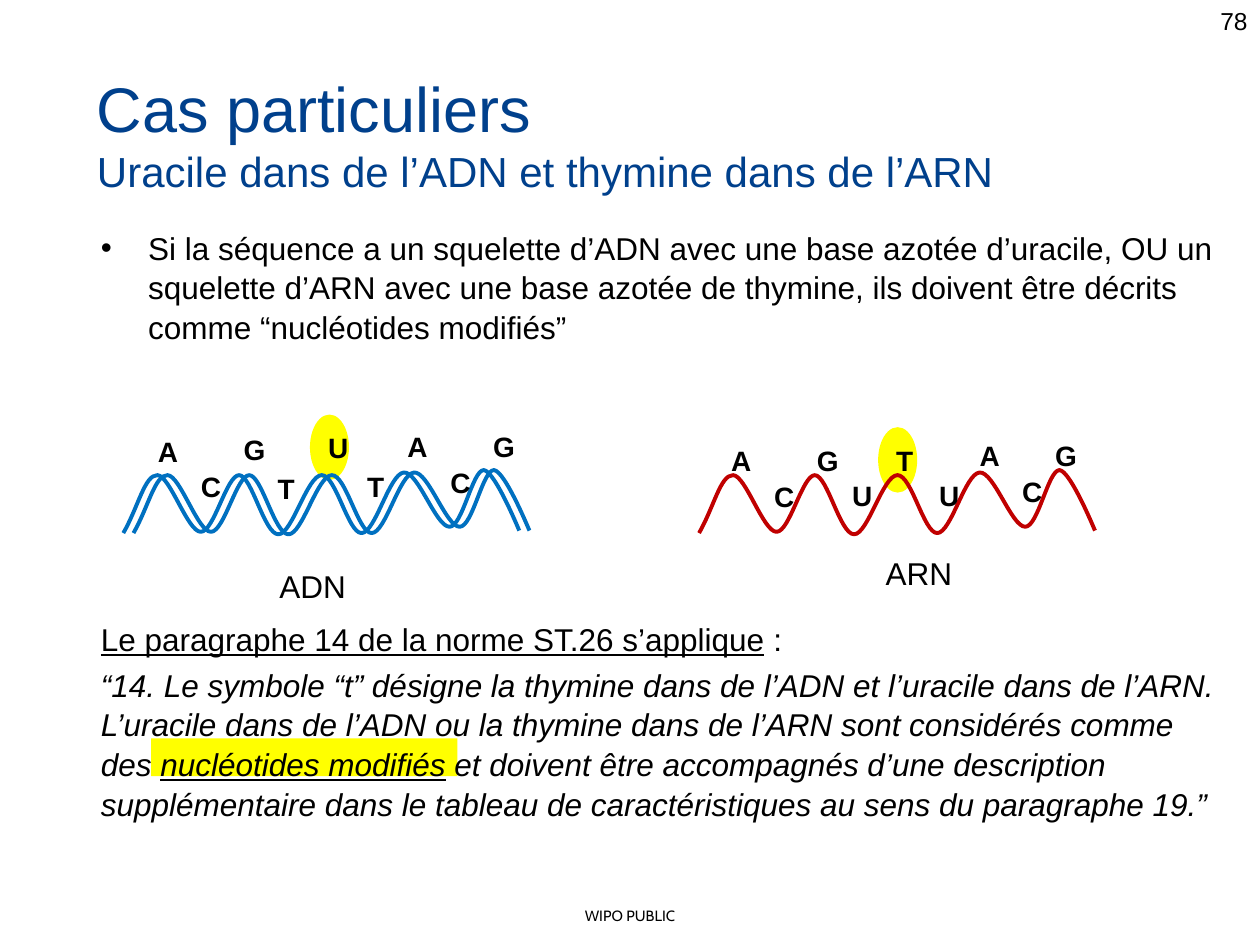
from lxml import etree
from pptx import Presentation
from pptx.dml.color import RGBColor
from pptx.enum.shapes import MSO_SHAPE
from pptx.enum.text import MSO_ANCHOR, MSO_AUTO_SIZE, PP_ALIGN
from pptx.oxml.ns import qn
from pptx.util import Pt

OVAL, RECTANGLE = MSO_SHAPE.OVAL, MSO_SHAPE.RECTANGLE
TOP, MIDDLE = MSO_ANCHOR.TOP, MSO_ANCHOR.MIDDLE
LEFT, CENTER, RIGHT = PP_ALIGN.LEFT, PP_ALIGN.CENTER, PP_ALIGN.RIGHT
FIXED = MSO_AUTO_SIZE.NONE

BLACK = RGBColor(0x00, 0x00, 0x00)
NAVY = RGBColor(0x00, 0x40, 0x8C)
YELLOW = RGBColor(0xFF, 0xFF, 0x00)
BLUE = RGBColor(0x00, 0x70, 0xC0)
RED = RGBColor(0xC0, 0x00, 0x00)

WAVE_TOP = 268.6
WAVE_START = (0, 36)
WAVE_CURVES = [
    ((8.6, 20.9), (12.2, 2.9), (19.4, 2.9)),
    ((26.6, 2.9), (36.7, 35.3), (44.3, 35.3)),
    ((51.8, 35.3), (59, 2.9), (66.2, 2.9)),
    ((73.4, 3.2), (80.6, 36.7), (88.6, 36.7)),
    ((96.5, 36.7), (105.1, 2.9), (113.4, 2.9)),
    ((121.5, 2.9), (128.4, 36), (136.1, 36)),
    ((144, 36), (152, 2.2), (160.3, 1.4)),
    ((168.5, 0.7), (178.6, 32.4), (186.4, 32.4)),
    ((193.8, 32.4), (199.5, 0), (206, 0)),
    ((212.4, 0.5), (226.5, 35.3), (226.3, 34.6)),
]
WAVES = [(70.5, BLUE), (76.3, BLUE), (399.5, RED)]

MODIFIED_BASES = [("T", 501.8, 244.1), ("U", 177.1, 236.9)]
BASES = [
    ("A", 79.9, 239), ("C", 104.4, 259.2), ("G", 128.9, 238.3),
    ("T", 148.3, 260.6), ("T", 199.4, 259.2), ("A", 222.5, 236.2),
    ("C", 247, 257), ("G", 271.4, 236.2),
    ("A", 407.5, 244.1), ("C", 432, 265), ("G", 456.5, 244.1),
    ("U", 476.6, 264.2), ("U", 526.3, 264.2), ("A", 549.4, 241.2),
    ("C", 573.8, 262.1), ("G", 592.6, 241.2),
]

TITLE = [("Cas particuliers", 36), ("Uracile dans de l’ADN et thymine dans de l’ARN", 24)]
RULE = ("Si la séquence a un squelette d’ADN avec une base azotée d’uracile, OU un "
        "squelette d’ARN avec une base azotée de thymine, ils doivent être décrits "
        "comme “nucléotides modifiés”")
HEADING = [("Le paragraphe 14 de la norme ST.26 s’applique", True), (" :", False)]
QUOTE = [
    ("“14. Le symbole “t” désigne la thymine dans de l’ADN et l’uracile dans de l’ARN. "
     "L’uracile dans de l’ADN ou la thymine dans de l’ARN sont considérés comme des ", False),
    ("nucléotides modifiés", True),
    (" et doivent être accompagnés d’une description supplémentaire dans le tableau "
     "de caractéristiques au sens du paragraphe 19.”", False),
]


class SlideBuilder:
    font_name = "Arial"

    def __init__(self, page):
        self.page = page

    def style(self, paragraph, size, color=BLACK, align=LEFT, bold=False, italic=False, name=None):
        paragraph.alignment = align
        font = paragraph.font
        font.name = name or self.font_name
        font.size = Pt(size)
        font.bold = bold
        font.italic = italic
        font.color.rgb = color

    def place(self, box, left, top, width, height, anchor):
        box.left, box.top, box.width, box.height = Pt(left), Pt(top), Pt(width), Pt(height)
        frame = box.text_frame
        frame.auto_size = FIXED
        frame.word_wrap = True
        frame.vertical_anchor = anchor
        return frame

    def title(self, lines, *area):
        frame = self.place(self.page.shapes.title, *area, MIDDLE)
        frame.margin_bottom = Pt(9.2)
        for index, (text, size) in enumerate(lines):
            paragraph = frame.add_paragraph() if index else frame.paragraphs[0]
            paragraph.text = text
            paragraph.space_before = Pt(0)
            self.style(paragraph, size, NAVY)

    def body(self, items, *area):
        frame = self.place(self.page.placeholders[1], *area, TOP)
        for index, (spans, space_before, bullet, italic) in enumerate(items):
            paragraph = frame.add_paragraph() if index else frame.paragraphs[0]
            for text, underline in spans:
                span = paragraph.add_run()
                span.text = text
                span.font.underline = underline
            properties = paragraph._p.get_or_add_pPr()
            indent = Pt(27) if bullet else 0
            properties.set("marL", str(indent))
            properties.set("indent", str(-indent))
            if bullet:
                etree.SubElement(properties, qn("a:buChar")).set("char", "•")
            else:
                etree.SubElement(properties, qn("a:buNone"))
            paragraph.space_before = Pt(space_before)
            paragraph.line_spacing = 1.05
            self.style(paragraph, 18, italic=italic)

    def label(self, text, left, top, width, height, size, wrap=True, **look):
        box = self.page.shapes.add_textbox(Pt(left), Pt(top), Pt(width), Pt(height))
        box.text_frame.word_wrap = wrap
        paragraph = box.text_frame.paragraphs[0]
        paragraph.text = text
        self.style(paragraph, size, **look)

    def shape(self, kind, left, top, width, height, fill=None):
        shape = self.page.shapes.add_shape(kind, Pt(left), Pt(top), Pt(width), Pt(height))
        shape.shadow.inherit = False
        shape.line.fill.background()
        if fill is None:
            shape.fill.background()
        else:
            shape.fill.solid()
            shape.fill.fore_color.rgb = fill
        return shape

    def marker(self, *area):
        marker = self.shape(RECTANGLE, *area, YELLOW)
        self.page.placeholders[1]._element.addprevious(marker._element)

    def base(self, letter, left, top, fill=None):
        oval = self.shape(OVAL, left, top, 22.3, 37.4, fill)
        oval.text_frame.word_wrap = True
        paragraph = oval.text_frame.paragraphs[0]
        paragraph.text = letter
        self.style(paragraph, 16, align=CENTER, bold=True)

    def wave(self, left, color):
        def locate(point):
            return Pt(left + point[0]), Pt(WAVE_TOP + point[1])

        builder = self.page.shapes.build_freeform(*locate(WAVE_START))
        builder.add_line_segments(
            [locate(point) for curve in WAVE_CURVES for point in curve], close=False)
        wave = builder.convert_to_shape()
        segments = list(wave._element.iter(qn("a:lnTo")))
        for start in range(0, len(segments), 3):
            curve = etree.Element(qn("a:cubicBezTo"))
            segments[start].addprevious(curve)
            for segment in segments[start:start + 3]:
                curve.append(segment[0])
                segment.getparent().remove(segment)
        wave.shadow.inherit = False
        wave.fill.background()
        wave.line.color.rgb = color
        wave.line.width = Pt(2.25)


def main():
    deck = Presentation()
    deck.slide_width, deck.slide_height = Pt(720), Pt(540)
    slide = SlideBuilder(deck.slides.add_slide(deck.slide_layouts[1]))

    slide.title(TITLE, 48.2, 33.8, 648, 90)
    slide.body([
        ([(RULE, False)], 0, True, False),
        (HEADING, 155.4, False, False),
        (QUOTE, 3.6, False, True),
    ], 50.4, 126, 659.5, 373.7)
    slide.marker(86.4, 421.9, 175, 21.6)
    slide.label("WIPO PUBLIC", 0, 514.8, 720, 17.3, 8.5, align=CENTER, name="Cabin")
    slide.label("78", 552.2, 0, 167.8, 37.4, 14, align=RIGHT)

    for letter, left, top in MODIFIED_BASES:
        slide.base(letter, left, top, YELLOW)
    for left, color in WAVES:
        slide.wave(left, color)
    for letter, left, top in BASES:
        slide.base(letter, left, top)
    slide.label("ADN", 152.6, 320.4, 52.6, 28.8, 18, wrap=False)
    slide.label("ARN", 499, 313.2, 52.6, 28.8, 18, wrap=False)

    deck.save("out.pptx")


if __name__ == "__main__":
    main()
